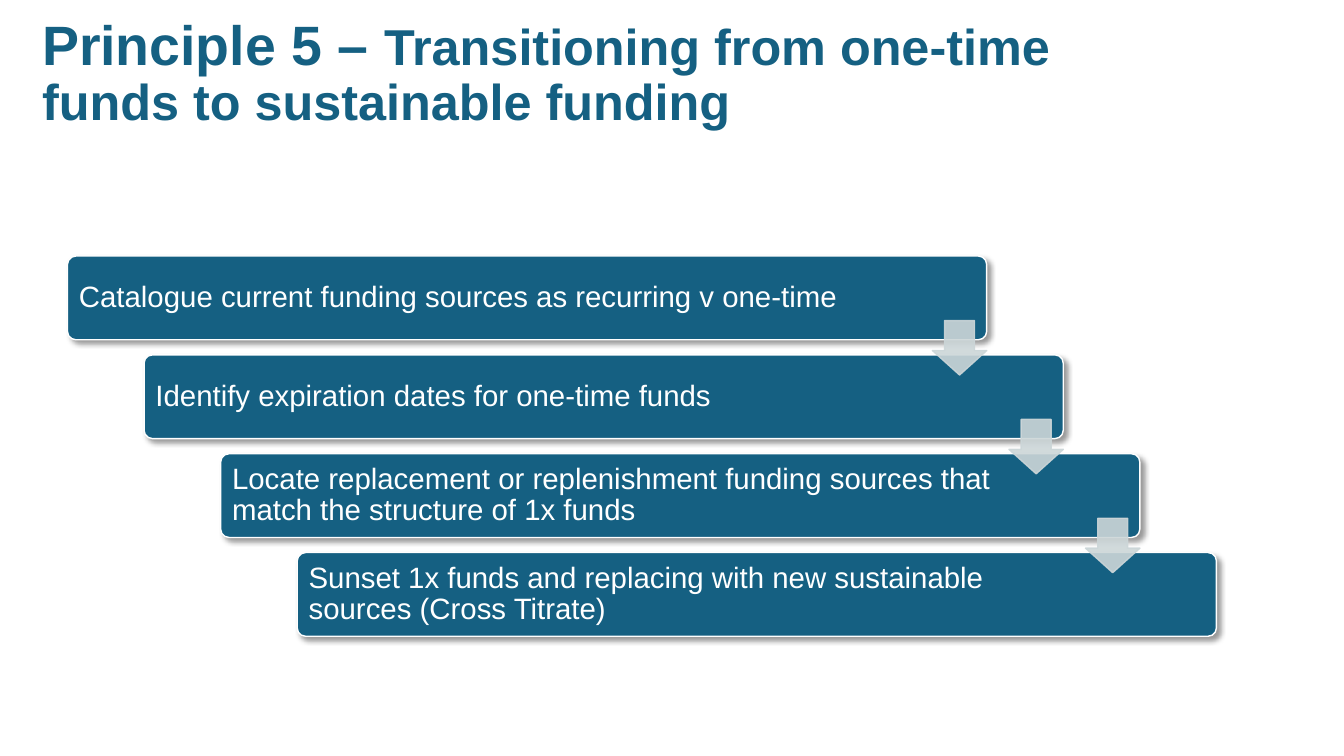
from dataclasses import dataclass

from lxml.etree import SubElement
from pptx import Presentation
from pptx.dml.color import RGBColor
from pptx.enum.shapes import MSO_SHAPE
from pptx.enum.text import MSO_ANCHOR, PP_ALIGN
from pptx.oxml.ns import qn
from pptx.shapes.autoshape import Shape
from pptx.slide import Slide
from pptx.util import Pt

COLORS = {"teal": "156082", "white": "FFFFFF", "arrow": "CCD6D8", "shadow": "000000"}
FONT = "Arial"
STEP_RIGHT, STEP_DOWN = 54.7, 70.6
FIRST_LEFT, FIRST_TOP = 48.2, 182.9
BAR_WIDTH, BAR_HEIGHT = 656.6, 59.8
ARROW_RIGHT, ARROW_DOWN, ARROW_SIZE = 617.8, 46.1, 38.9


@dataclass
class Step:
    position: int
    wording: str

    @property
    def left(self) -> float:
        return FIRST_LEFT + self.position * STEP_RIGHT

    @property
    def top(self) -> float:
        return FIRST_TOP + self.position * STEP_DOWN


WORDINGS = [
    "Catalogue current funding sources as recurring v one-time",
    "Identify expiration dates for one-time funds",
    "Locate replacement or replenishment funding sources that match the structure of 1x funds",
    "Sunset 1x funds and replacing with new sustainable sources (Cross Titrate)",
]
STEPS = [Step(position, wording) for position, wording in enumerate(WORDINGS)]


def rgb(name: str) -> RGBColor:
    return RGBColor.from_string(COLORS[name])


def paint(shape: Shape, fill: str, line: str) -> None:
    shape.shadow.inherit = False
    shape.fill.solid()
    shape.fill.fore_color.rgb = rgb(fill)
    shape.line.color.rgb = rgb(line)
    shape.line.width = Pt(1)


def add_shadow(shape: Shape) -> None:
    effects = shape._element.spPr.find(qn("a:effectLst"))
    shadow = SubElement(
        effects, qn("a:outerShdw"), blurRad=str(Pt(4)), dist=str(Pt(3)),
        dir=str(45 * 60000), algn="tl", rotWithShape="0",
    )
    color = SubElement(shadow, qn("a:srgbClr"), val=COLORS["shadow"])
    SubElement(color, qn("a:alpha"), val="40000")


def draw_title(slide: Slide) -> None:
    heading = slide.shapes.add_textbox(Pt(23), Pt(19.4), Pt(817.2), Pt(67.7)).text_frame
    heading.word_wrap = True
    heading.vertical_anchor = MSO_ANCHOR.MIDDLE
    paragraph = heading.paragraphs[0]
    paragraph.line_spacing = 0.9
    paragraph.font.name = FONT
    paragraph.font.bold = True
    paragraph.font.color.rgb = rgb("teal")
    for wording, size in (
        ("Principle 5 – ", 39.6),
        ("Transitioning from one-time funds to sustainable funding", 36),
    ):
        run = paragraph.add_run()
        run.text = wording
        run.font.size = Pt(size)


def draw_bar(slide: Slide, step: Step) -> None:
    bar = slide.shapes.add_shape(
        MSO_SHAPE.ROUNDED_RECTANGLE, Pt(step.left), Pt(step.top), Pt(BAR_WIDTH), Pt(BAR_HEIGHT)
    )
    bar.adjustments[0] = 0.1
    paint(bar, "teal", "white")
    add_shadow(bar)
    label = bar.text_frame
    label.word_wrap = True
    label.vertical_anchor = MSO_ANCHOR.MIDDLE
    label.margin_left = Pt(6.4)
    label.margin_right = Pt(100)
    paragraph = label.paragraphs[0]
    paragraph.text = step.wording
    paragraph.alignment = PP_ALIGN.LEFT
    paragraph.line_spacing = 0.9
    paragraph.font.name = FONT
    paragraph.font.size = Pt(21)
    paragraph.font.color.rgb = rgb("white")


def draw_arrow(slide: Slide, step: Step) -> None:
    arrow = slide.shapes.add_shape(
        MSO_SHAPE.DOWN_ARROW, Pt(step.left + ARROW_RIGHT), Pt(step.top + ARROW_DOWN),
        Pt(ARROW_SIZE), Pt(ARROW_SIZE),
    )
    arrow.adjustments[0] = 0.55
    arrow.adjustments[1] = 0.45
    paint(arrow, "arrow", "arrow")
    for color in arrow._element.spPr.iter(qn("a:srgbClr")):
        SubElement(color, qn("a:alpha"), val="90000")


def main() -> None:
    presentation = Presentation()
    presentation.slide_width = Pt(960)
    presentation.slide_height = Pt(540)
    slide = presentation.slides.add_slide(presentation.slide_layouts[6])
    draw_title(slide)
    for step in STEPS:
        draw_bar(slide, step)
    for step in STEPS[:-1]:
        draw_arrow(slide, step)
    presentation.save("out.pptx")


if __name__ == "__main__":
    main()
